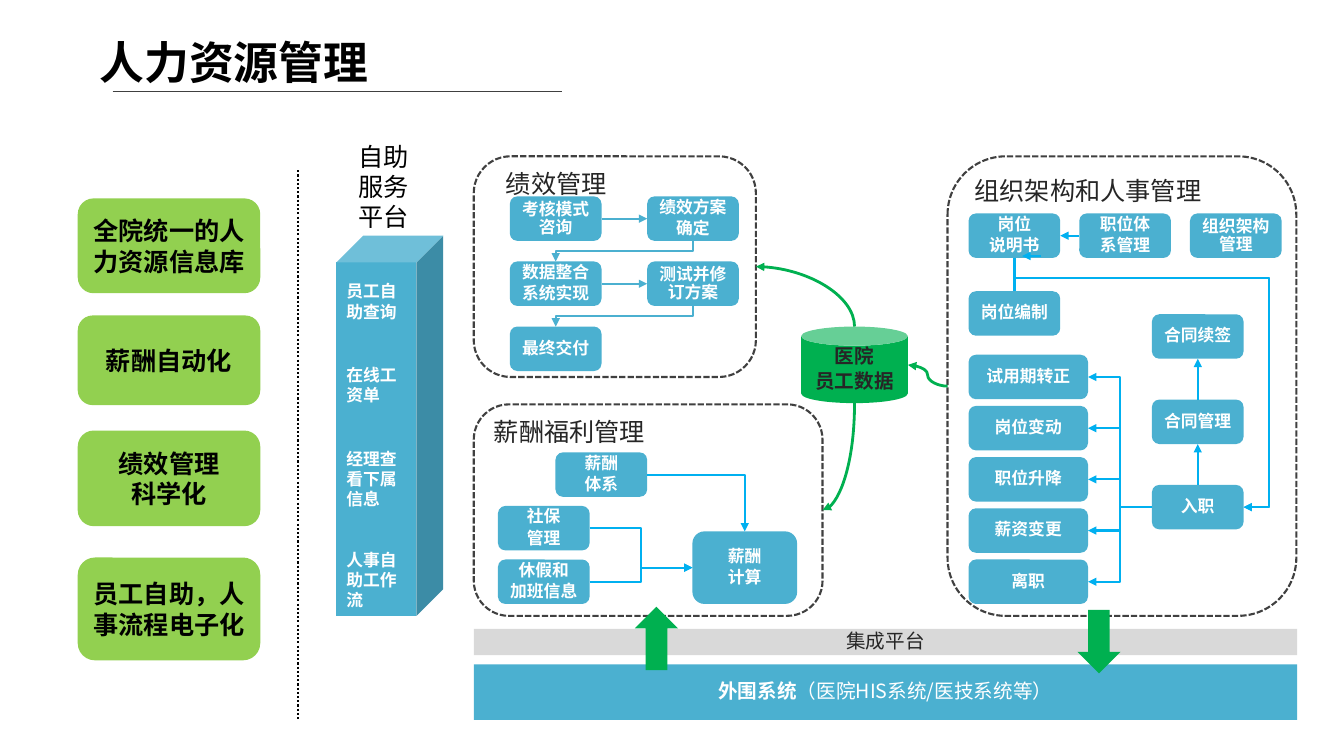
from dataclasses import dataclass

from lxml import etree
from pptx import Presentation
from pptx.dml.color import RGBColor
from pptx.enum.dml import MSO_LINE
from pptx.enum.shapes import MSO_CONNECTOR, MSO_SHAPE
from pptx.enum.text import MSO_ANCHOR, PP_ALIGN
from pptx.oxml.ns import qn
from pptx.util import Cm, Pt

ROUND, RECT = MSO_SHAPE.ROUNDED_RECTANGLE, MSO_SHAPE.RECTANGLE
CAN, CUBE = MSO_SHAPE.CAN, MSO_SHAPE.CUBE
UP, DOWN = MSO_SHAPE.UP_ARROW, MSO_SHAPE.DOWN_ARROW
STRAIGHT, ELBOW = MSO_CONNECTOR.STRAIGHT, MSO_CONNECTOR.ELBOW
DASH, DOT = MSO_LINE.SQUARE_DOT, MSO_LINE.ROUND_DOT
LEFT, CENTER = PP_ALIGN.LEFT, PP_ALIGN.CENTER
TOP, MIDDLE = MSO_ANCHOR.TOP, MSO_ANCHOR.MIDDLE
FONT = "Noto Sans CJK SC"
BLUE, SKY, GREEN, LIME = "4BB0D0", "00B0F0", "00B050", "92D050"
GREY, INK, DARK, BLACK, WHITE = "D9D9D9", "262626", "404040", "000000", "FFFFFF"
T, L, B, R = range(4)  # connection sites


@dataclass
class Box:
    text: str
    x: float
    y: float
    w: float = 2.31
    h: float = 1.12
    fill: str = BLUE
    color: str = WHITE
    size: int = 12
    bold: bool = True
    form: int = ROUND
    tight: bool = True


@dataclass
class Link:
    start: str
    out: int
    end: str
    into: int
    color: str = SKY
    form: str = "line"
    turn: int = 0
    adj: tuple = ()


def rgb(code: str) -> RGBColor:
    return RGBColor.from_string(code)


def style(frame, text: str, size: int, color: str, bold: bool, align, tight: bool) -> None:
    frame.word_wrap = True
    frame.text = text
    for i, para in enumerate(frame.paragraphs):
        para.alignment = align
        if tight:
            para.line_spacing = 0.9
            para.space_before = Pt(size * 0.2 if i else 0)
        for run in para.runs:
            font = run.font
            font.size, font.bold, font.name = Pt(size), bold, FONT
            font.color.rgb = rgb(color)
            etree.SubElement(run._r.rPr, qn("a:ea"), typeface=FONT)


def draw(box: Box):
    shape = slide.shapes.add_shape(box.form, Cm(box.x), Cm(box.y), Cm(box.w), Cm(box.h))
    shape.shadow.inherit = False
    shape.fill.solid()
    shape.fill.fore_color.rgb = rgb(box.fill)
    shape.line.fill.background()
    if box.text:
        shape.text_frame.vertical_anchor = MIDDLE
        style(shape.text_frame, box.text, box.size, box.color, box.bold, CENTER, box.tight)
    return shape


def panel(text: str, x: float, y: float, w: float, h: float, inset: float):
    """Draw a dashed frame with its heading inside."""
    shape = draw(Box(text, x, y, w, h, color=INK, size=18, bold=False))
    shape.fill.background()
    shape.line.color.rgb = rgb(DARK)
    shape.line.width, shape.line.dash_style = Pt(1.5), DASH
    frame = shape.text_frame
    frame.vertical_anchor, frame.margin_left = TOP, Cm(inset)
    frame.paragraphs[0].alignment = LEFT
    return shape


def label(text: str, x: float, y: float, w: float, h: float, size: int, color: str, bold: bool) -> None:
    frame = slide.shapes.add_textbox(Cm(x), Cm(y), Cm(w), Cm(h)).text_frame
    style(frame, text, size, color, bold, LEFT, False)


def stroke(form, ends: tuple, color: str, width: float, head: bool = False):
    line = slide.shapes.add_connector(form, *ends)
    line.line.color.rgb = rgb(color)
    line.line.width = Pt(width)
    if head:
        etree.SubElement(line.line._get_or_add_ln(), qn("a:tailEnd"), type="triangle")
    etree.SubElement(line._element.spPr, qn("a:effectLst"))
    return line


def spot(shape, site: int) -> tuple[int, int]:
    """Return the middle of one side of a shape."""
    x, y, w, h = shape.left, shape.top, shape.width, shape.height
    return ((x + w // 2, y), (x, y + h // 2), (x + w // 2, y + h), (x + w, y + h // 2))[site]


def join(link: Link) -> None:
    first, last = nodes[link.start], nodes[link.end]
    (x1, y1), (x2, y2) = spot(first, link.out), spot(last, link.into)
    form = STRAIGHT if link.form == "line" else ELBOW
    width = 2 if link.color == GREEN else 1.5
    line = stroke(form, (x1, y1, x2, y2), link.color, width, True)
    if first.auto_shape_type != CAN:
        line.begin_connect(first, link.out)
    if last.auto_shape_type != CAN:
        line.end_connect(last, link.into)
    if form == STRAIGHT:
        return
    dx, dy = x2 - x1, y2 - y1
    # Path direction before the turn is applied
    u, v = {0: (dx, dy), 90: (dy, -dx), 180: (-dx, -dy), 270: (-dy, dx)}[link.turn]
    line.width, line.height = abs(u), abs(v)
    line.left, line.top = (x1 + x2 - abs(u)) // 2, (y1 + y2 - abs(v)) // 2
    frame = line._element.spPr.find(qn("a:xfrm"))
    frame.set("rot", str(link.turn * 60000))
    frame.set("flipH", str(int(u < 0)))
    frame.set("flipV", str(int(v < 0)))
    geom = line._element.spPr.find(qn("a:prstGeom"))
    geom.set("prst", link.form)
    guides = geom.find(qn("a:avLst"))
    if guides is None:
        guides = etree.SubElement(geom, qn("a:avLst"))
    for i, part in enumerate(link.adj, 1):
        etree.SubElement(guides, qn("a:gd"), name=f"adj{i}", fmla=f"val {round(part * 100000)}")


deck = Presentation()
deck.slide_width, deck.slide_height = Cm(33.87), Cm(19.05)
slide = deck.slides.add_slide(deck.slide_layouts[6])

label("人力资源管理", 2.26, 0.74, 30, 1.63, 32, BLACK, True)
stroke(STRAIGHT, (Cm(2.84), Cm(2.31), Cm(14.17), Cm(2.31)), DARK, 1)
rule = stroke(STRAIGHT, (Cm(7.52), Cm(4.29), Cm(7.52), Cm(18.11)), BLACK, 1.5)
rule.line.dash_style = DOT

GOALS = [("全院统一的人力资源信息库", 5, 2.39), ("薪酬自动化", 7.95, 2.26),
         ("绩效管理\n科学化", 10.85, 2.41), ("员工自助，人事流程电子化", 14.05, 2.59)]
for text, y, h in GOALS:
    draw(Box(text, 1.96, y, 4.6, h, LIME, BLACK, 18, tight=False))

draw(Box("", 8.48, 5.94, 2.69, 9.58, form=CUBE))
for text, y, h in [("员工自助查询", 6.96, 1.27), ("在线工资单", 9.07, 1.27),
                   ("经理查看下属信息", 11.18, 1.8), ("人事自助工作流", 13.72, 1.8)]:
    label(text, 8.48, y, 1.98, h, 12, WHITE, True)
label("自助服务平台", 8.79, 3.43, 2.39, 2.57, 18, BLACK, False)

STEPS = ["考核模式咨询", "绩效方案\n确定", "数据整合\n系统实现", "测试并修订方案", "最终交付"]
POSTS = ["岗位\n说明书", "职位体\n系管理", "组织架构管理"]
MOVES = ["试用期转正", "岗位变动", "职位升降", "薪资变更", "离职"]
TERMS = ["合同续签", "合同管理", "入职"]
boxes = [Box("医院\n员工数据", 20.19, 8.23, 2.69, 1.93, GREEN, INK, 14, form=CAN),
         Box("薪酬\n体系", 14, 11.4), Box("社保\n管理", 12.55, 12.75),
         Box("休假和\n加班信息", 12.55, 14.1), Box("薪酬\n计算", 17.45, 13.39, 2.64, 1.83),
         Box("岗位编制", 24.41, 7.34)]
boxes += [Box(t, 12.85 + i % 2 * 3.46, 4.95 + i // 2 * 1.64) for i, t in enumerate(STEPS)]
boxes += [Box(t, 24.41 + i * 2.79, 5.38) for i, t in enumerate(POSTS)]
boxes += [Box(t, 24.41, 8.94 + i * 1.29, 3.01) for i, t in enumerate(MOVES)]
boxes += [Box(t, 29.03, 7.92 + i * 2.15) for i, t in enumerate(TERMS)]
nodes = {box.text.replace("\n", ""): draw(box) for box in boxes}
for text, x, y, w, h, inset in [("薪酬福利管理", 11.94, 10.19, 8.79, 5.33, 0.25),
                                ("绩效管理", 11.94, 3.94, 7.11, 5.56, 0.54),
                                ("组织架构和人事管理", 23.88, 3.94, 8.79, 11.58, 0.25)]:
    nodes[text] = panel(text, x, y, w, h, inset)

links = [Link("薪酬体系", R, "薪酬计算", T, form="bentConnector2"),
         Link("社保管理", R, "薪酬计算", L, form="bentConnector3"),
         Link("休假和加班信息", R, "薪酬计算", L, form="bentConnector3"),
         Link("考核模式咨询", R, "绩效方案确定", L, BLUE),
         Link("绩效方案确定", B, "数据整合系统实现", T, BLUE, "bentConnector3", 90),
         Link("数据整合系统实现", R, "测试并修订方案", L, BLUE),
         Link("测试并修订方案", B, "最终交付", T, BLUE, "bentConnector3", 90),
         Link("职位体系管理", L, "岗位说明书", R),
         Link("合同管理", T, "合同续签", B), Link("入职", T, "合同管理", B),
         Link("岗位说明书", B, "入职", R, SKY, "bentConnector4", 270, (0.08, 1.11)),
         Link("岗位编制", T, "入职", R, SKY, "bentConnector4", 270, (-0.06, 1.11)),
         Link("组织架构和人事管理", L, "医院员工数据", R, GREEN, "curvedConnector3", 180),
         Link("医院员工数据", T, "绩效管理", R, GREEN, "curvedConnector2", 270),
         Link("医院员工数据", B, "薪酬福利管理", R, GREEN, "curvedConnector2", 90)]
links += [Link("入职", L, move, R, form="bentConnector3", turn=180) for move in MOVES]
for link in links:
    join(link)
stroke(STRAIGHT, (Cm(26.24), Cm(6.45), Cm(25.76), Cm(6.45)), SKY, 1.5, True)

outer = draw(Box("外围系统", 11.94, 16.74, 20.75, 1.4, size=14, form=RECT))
para = outer.text_frame.paragraphs[0]
para.text = "外围系统"
para.add_run().text = "（医院HIS系统/医技系统等）"
for run, bold in zip(para.runs, (True, False)):
    run.font.size, run.font.bold, run.font.name = Pt(14), bold, FONT
    run.font.color.rgb = rgb(WHITE)
    etree.SubElement(run._r.get_or_add_rPr(), qn("a:ea"), typeface=FONT)
draw(Box("集成平台", 11.94, 15.85, 20.75, 0.66, GREY, INK, 14, False, RECT))
draw(Box("", 27.15, 15.37, 1.09, 1.6, GREEN, form=DOWN))
draw(Box("", 16, 15.29, 1.09, 1.6, GREEN, form=UP))
deck.save("out.pptx")
